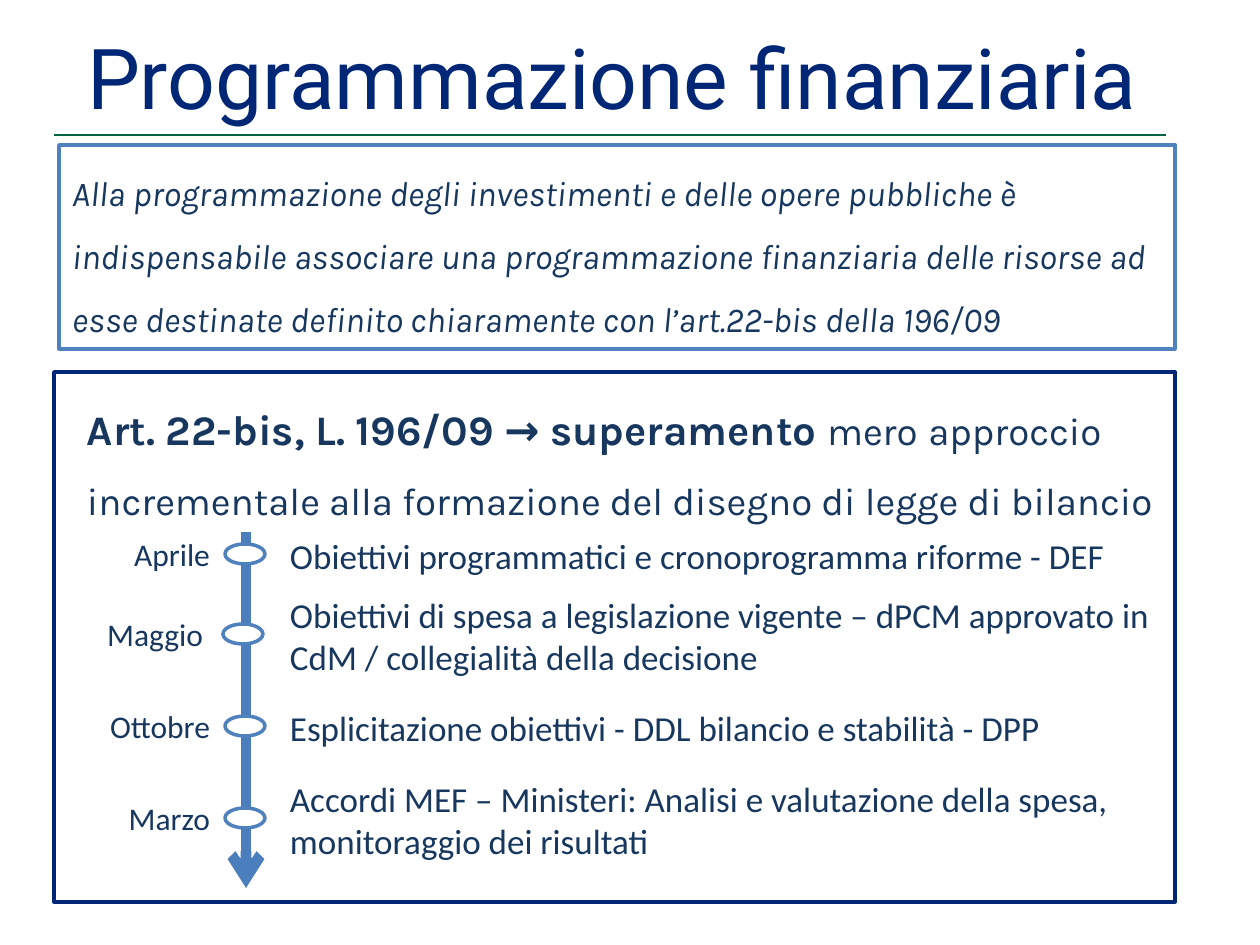
from dataclasses import dataclass

from lxml.etree import SubElement
from pptx import Presentation
from pptx.dml.color import RGBColor
from pptx.enum.shapes import MSO_CONNECTOR, MSO_SHAPE
from pptx.enum.text import MSO_ANCHOR, MSO_AUTO_SIZE, PP_ALIGN
from pptx.oxml.ns import qn
from pptx.util import Emu, Pt

EMU_PER_PX = 914400 / 126


def px(length):
    return Emu(round(length * EMU_PER_PX))


@dataclass(frozen=True)
class Theme:
    navy: RGBColor = RGBColor.from_string("002776")
    text: RGBColor = RGBColor.from_string("17375E")
    blue: RGBColor = RGBColor.from_string("4F81BD")
    timeline: RGBColor = RGBColor.from_string("4B7EBC")
    green: RGBColor = RGBColor.from_string("006442")
    white: RGBColor = RGBColor.from_string("FFFFFF")
    title_size: int = 48
    lead_size: int = 24
    detail_size: int = 22
    body_size: int = 20
    month_size: int = 18
    outline: int = 2
    title_font: str = "Roboto"
    statement_font: str = "Karla"
    timeline_font: str = "Calibri"


class SlideBuilder:
    def __init__(self, slide, theme):
        self.slide = slide
        self.theme = theme

    def add_runs(self, shape, runs, font, color=None, align=PP_ALIGN.LEFT,
                 spacing=None, left_inset=13, right_inset=13):
        frame = shape.text_frame
        frame.word_wrap = True
        frame.auto_size = MSO_AUTO_SIZE.NONE
        frame.vertical_anchor = MSO_ANCHOR.TOP
        frame.margin_left, frame.margin_right = px(left_inset), px(right_inset)
        frame.margin_top = frame.margin_bottom = px(6)
        paragraph = frame.paragraphs[0]
        paragraph.alignment = align
        if spacing:
            paragraph.line_spacing = spacing
        for text, size, bold, italic in runs:
            run = paragraph.add_run()
            run.text = text
            run.font.name = font
            run.font.size = Pt(size)
            run.font.bold = bold
            run.font.italic = italic
            run.font.color.rgb = color or self.theme.text

    def title(self, text, left, top, width, height):
        shape = self.slide.shapes.title
        shape.left, shape.top = px(left), px(top)
        shape.width, shape.height = px(width), px(height)
        runs = [(text, self.theme.title_size, False, False)]
        self.add_runs(shape, runs, self.theme.title_font, self.theme.navy, left_inset=33)

    def text(self, runs, left, top, width, height, font, **style):
        box = self.slide.shapes.add_textbox(px(left), px(top), px(width), px(height))
        self.add_runs(box, runs, font, **style)

    def shape(self, kind, left, top, width, height, line, fill=None):
        shape = self.slide.shapes.add_shape(kind, px(left), px(top), px(width), px(height))
        shape.shadow.inherit = False
        if fill is None:
            shape.fill.background()
        else:
            shape.fill.solid()
            shape.fill.fore_color.rgb = fill
        shape.line.color.rgb = line
        shape.line.width = Pt(self.theme.outline)
        return shape

    def line(self, start, end, color, width, arrow=False):
        connector = self.slide.shapes.add_connector(
            MSO_CONNECTOR.STRAIGHT, *map(px, start + end))
        connector.line.color.rgb = color
        connector.line.width = Pt(width)
        properties = connector._element.spPr
        if arrow:
            SubElement(properties.find(qn("a:ln")), qn("a:tailEnd"), type="arrow")
        SubElement(properties, qn("a:effectLst"))

    def milestone(self, month, description, center, marker_left=225,
                  month_inset=13, lines=1):
        theme = self.theme
        self.shape(MSO_SHAPE.OVAL, marker_left, center - 10, 40, 20,
                   theme.blue, theme.white)
        height = 13 + 42 * lines
        self.text([(description, theme.body_size, False, False)],
                  277, center + 1 - height // 2, 922, height, theme.timeline_font)
        self.text([(month, theme.month_size, False, False)],
                  54, center - 25, 169, 50, theme.timeline_font,
                  align=PP_ALIGN.RIGHT, right_inset=month_inset)


def main():
    theme = Theme()
    presentation = Presentation()
    presentation.slide_width, presentation.slide_height = px(1260), px(945)
    slide = presentation.slides.add_slide(presentation.slide_layouts[5])
    builder = SlideBuilder(slide, theme)

    builder.line((54, 135), (1166, 135), theme.green, 0.75)
    builder.title("Programmazione finanziaria", 54, 20, 1121, 115)

    premise = builder.shape(MSO_SHAPE.RECTANGLE, 59, 145, 1116, 204,
                            theme.blue, theme.white)
    builder.add_runs(premise, [(
        "Alla programmazione degli investimenti e delle opere pubbliche è "
        "indispensabile associare una programmazione finanziaria delle risorse ad "
        "esse destinate definito chiaramente con l’art.22-bis della 196/09",
        theme.body_size, False, True)], theme.statement_font, spacing=1.5)

    builder.text([
        ("Art. 22-bis, L. 196/09 → superamento ", theme.lead_size, True, False),
        ("mero", theme.detail_size, False, False),
        (" ", theme.lead_size, True, False),
        ("approccio incrementale alla formazione del disegno di legge di bilancio",
         theme.detail_size, False, False),
    ], 74, 372, 1111, 159, theme.statement_font, spacing=1.5)

    builder.line((246, 532), (246, 888), theme.timeline, 6, arrow=True)
    builder.milestone("Aprile", "Obiettivi programmatici e cronoprogramma riforme - DEF", 554)
    builder.milestone("Maggio", "Obiettivi di spesa a legislazione vigente – dPCM approvato in "
                      "CdM / collegialità della decisione", 634,
                      marker_left=223, month_inset=20, lines=2)
    builder.milestone("Ottobre", "Esplicitazione obiettivi - DDL bilancio e stabilità - DPP", 726)
    builder.milestone("Marzo", "Accordi MEF – Ministeri: Analisi e valutazione della spesa, "
                      "monitoraggio dei risultati", 818, lines=2)
    builder.shape(MSO_SHAPE.RECTANGLE, 54, 372, 1121, 530, theme.navy)

    presentation.save("out.pptx")


if __name__ == "__main__":
    main()
